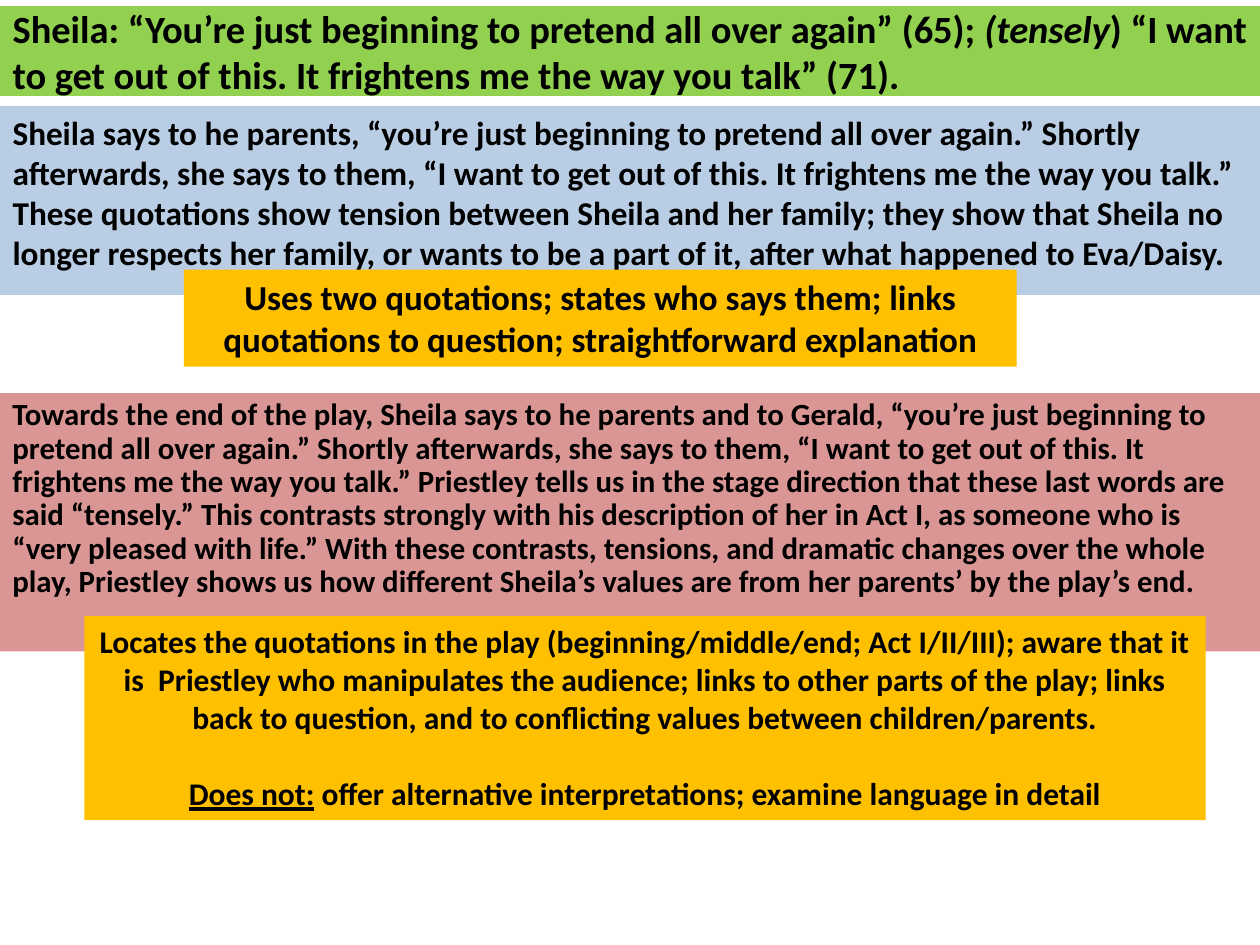
from dataclasses import dataclass

from pptx import Presentation
from pptx.dml.color import RGBColor
from pptx.enum.text import MSO_ANCHOR, MSO_AUTO_SIZE, PP_ALIGN
from pptx.oxml.ns import qn
from pptx.util import Inches, Pt

LEFT, CENTER = PP_ALIGN.LEFT, PP_ALIGN.CENTER
TOP, MIDDLE = MSO_ANCHOR.TOP, MSO_ANCHOR.MIDDLE
NO_AUTOFIT = MSO_AUTO_SIZE.NONE
TITLE_AND_CONTENT = 1
FONT = "Calibri"
COLORS = {
    "text": "000000",
    "quotation": "92D050",
    "basic answer": "B9CDE5",
    "better answer": "D99694",
    "comment": "FFC000",
}


@dataclass
class Run:
    text: str
    italic: bool = False
    underline: bool = False


@dataclass
class Panel:
    color: str
    left: float
    top: float
    width: float
    height: float


def color(name: str) -> RGBColor:
    return RGBColor.from_string(COLORS[name])


def place(shape, panel: Panel) -> None:
    """Move a shape to its panel and fill it."""
    shape.left, shape.top = Inches(panel.left), Inches(panel.top)
    shape.width, shape.height = Inches(panel.width), Inches(panel.height)
    shape.fill.solid()
    shape.fill.fore_color.rgb = color(panel.color)


def write(shape, paragraphs: list[list[Run]], *, size: float, align=LEFT,
          anchor=TOP, line_spacing: float = 1.0, gap: float = 0) -> None:
    """Fill a shape with bold text; gap is the space between paragraphs."""
    frame = shape.text_frame
    frame.word_wrap = True
    frame.auto_size = NO_AUTOFIT
    frame.vertical_anchor = anchor
    for index, runs in enumerate(paragraphs):
        paragraph = frame.add_paragraph() if index else frame.paragraphs[0]
        paragraph.alignment = align
        paragraph.line_spacing = line_spacing
        if index:
            paragraph.space_before = Pt(gap)
        for item in runs:
            run = paragraph.add_run()
            run.text = item.text
            run.font.name = FONT
            run.font.size = Pt(size)
            run.font.bold = True
            run.font.italic = item.italic
            run.font.underline = item.underline
            run.font.color.rgb = color("text")


def remove_bullets(shape) -> None:
    for paragraph in shape.text_frame.paragraphs:
        properties = paragraph._p.get_or_add_pPr()
        properties.set("marL", "0")
        properties.set("indent", "0")
        properties.append(properties.makeelement(qn("a:buNone"), {}))


def add_panel(slide, panel: Panel, paragraphs: list[list[Run]], **text_format) -> None:
    shape = slide.shapes.add_textbox(0, 0, 0, 0)
    place(shape, panel)
    write(shape, paragraphs, **text_format)


def main() -> None:
    presentation = Presentation()
    presentation.slide_width, presentation.slide_height = Inches(10), Inches(7.5)
    slide = presentation.slides.add_slide(presentation.slide_layouts[TITLE_AND_CONTENT])

    # Quotations
    title = slide.shapes.title
    place(title, Panel("quotation", 0, 0.05, 10, 0.71))
    title.line.color.rgb = color("quotation")
    title.line.width = Pt(0.75)
    write(title, [[
        Run("Sheila: “You’re just beginning to pretend all over again” (65); "),
        Run("(tensely", italic=True),
        Run(") “I want to get out of this. It frightens me the way you talk” (71)."),
    ]], size=22, anchor=MIDDLE)

    # Basic answer
    body = slide.placeholders[1]
    place(body, Panel("basic answer", 0, 0.84, 10, 1.5))
    write(body, [[Run(
        "Sheila says to he parents, “you’re just beginning to pretend all over again.” "
        "Shortly afterwards, she says to them, “I want to get out of this. It frightens "
        "me the way you talk.” These quotations show tension between Sheila and her "
        "family; they show that Sheila no longer respects her family, or wants to be a "
        "part of it, after what happened to Eva/Daisy."
    )]], size=19)
    remove_bullets(body)

    # Better answer
    add_panel(slide, Panel("better answer", 0, 3.12, 10, 2.05), [[Run(
        "Towards the end of the play, Sheila says to he parents and to Gerald, “you’re "
        "just beginning to pretend all over again.” Shortly afterwards, she says to "
        "them, “I want to get out of this. It frightens me the way you talk.” Priestley "
        "tells us in the stage direction that these last words are said “tensely.” This "
        "contrasts strongly with his description of her in Act I, as someone who is "
        "“very pleased with life.” With these contrasts, tensions, and dramatic changes "
        "over the whole play, Priestley shows us how different Sheila’s values are from "
        "her parents’ by the play’s end."
    )]], size=17.6, line_spacing=0.9)

    # Comments on each answer
    add_panel(slide, Panel("comment", 1.46, 2.14, 6.61, 0.77), [[Run(
        "Uses two quotations; states who says them; links quotations to question; "
        "straightforward explanation"
    )]], size=20, align=CENTER)
    add_panel(slide, Panel("comment", 0.67, 4.89, 8.9, 1.62), [
        [Run(
            "Locates the quotations in the play (beginning/middle/end; Act I/II/III); "
            "aware that it is  Priestley who manipulates the audience; links to other "
            "parts of the play; links back to question, and to conflicting values "
            "between children/parents."
        )],
        [
            Run("Does not:", underline=True),
            Run(" offer alternative interpretations; examine language in detail"),
        ],
    ], size=18, align=CENTER, gap=22)

    presentation.save("out.pptx")


if __name__ == "__main__":
    main()
